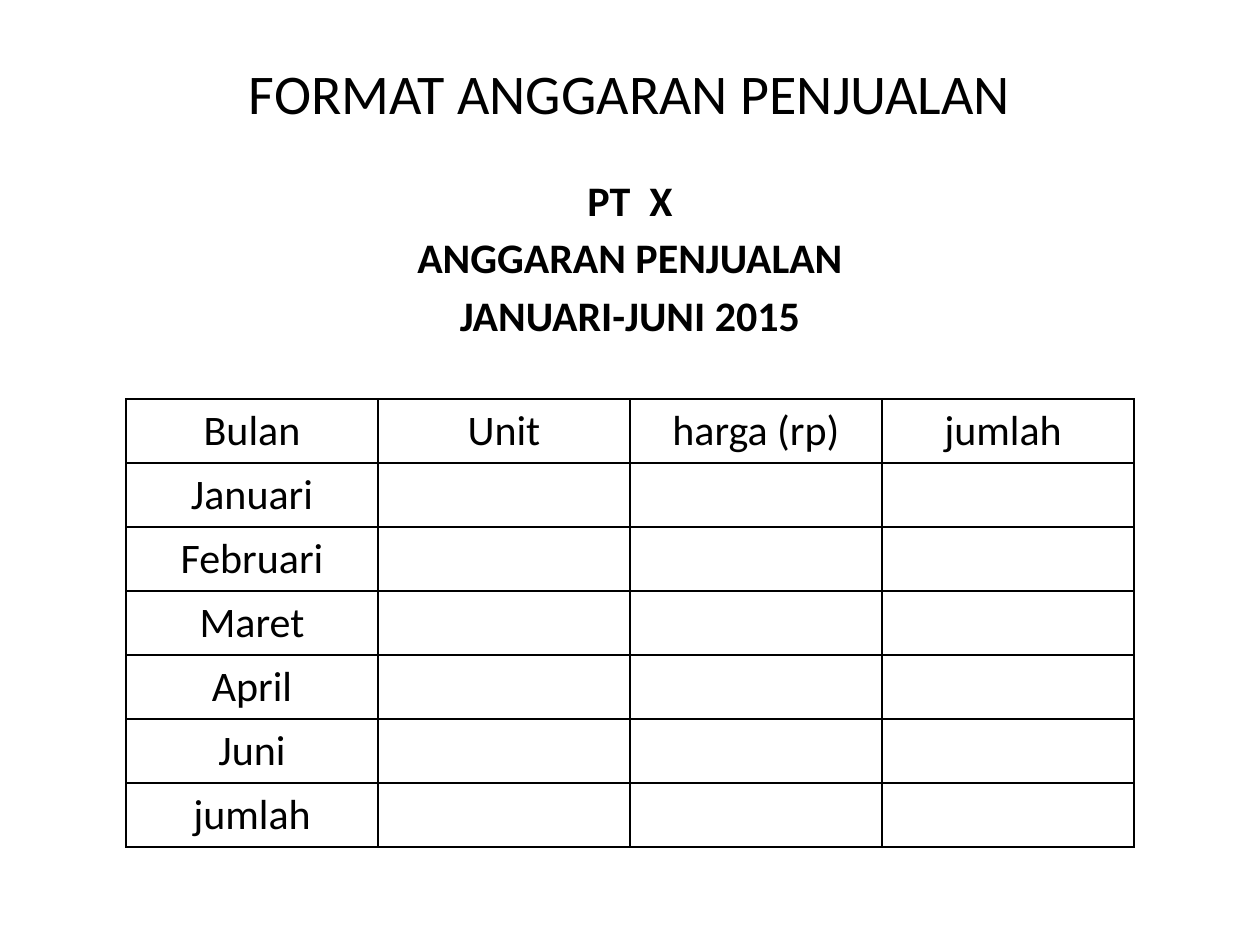
from dataclasses import dataclass
from lxml import etree
from pptx import Presentation
from pptx import util as u
from pptx.dml.color import RGBColor
from pptx.enum import text
from pptx.oxml.ns import qn

PX = 914400 // 126
FONT = "Calibri"
HUES = {"ink": "000000", "paper": "FFFFFF"}


@dataclass
class Block:
    left: int
    top: int
    width: int
    height: int
    lines: list[str]
    size: int
    bold: bool
    anchor: text.MSO_ANCHOR


BLOCKS = [
    Block(63, 38, 1134, 109, ["FORMAT ANGGARAN PENJUALAN"], 32, False,
          text.MSO_ANCHOR.MIDDLE),
    Block(63, 168, 1134, 677,
          ["PT  X", "ANGGARAN PENJUALAN", "JANUARI-JUNI 2015"], 24, True,
          text.MSO_ANCHOR.TOP),
]
HEADS = ["Bulan", "Unit", "harga (rp)", "jumlah "]
MONTHS = ["Januari", "Februari", "Maret", "April", "Juni", "jumlah"]
ROWS = [HEADS] + [[name, "", "", ""] for name in MONTHS]
LEFT, TOP, COL, ROW = 126, 399, 252, 64


def style(para, size: int, bold: bool = False) -> None:
    para.alignment = text.PP_ALIGN.CENTER
    for run in para.runs:
        font = run.font
        font.name, font.size, font.bold = FONT, u.Pt(size), bold
        font.color.rgb = RGBColor.from_string(HUES["ink"])


def draw_block(slide, block: Block) -> None:
    box = slide.shapes.add_textbox(block.left * PX, block.top * PX,
                                   block.width * PX, block.height * PX)
    frame = box.text_frame
    frame.word_wrap = True
    frame.vertical_anchor = block.anchor
    frame.text = "\n".join(block.lines)
    for i, para in enumerate(frame.paragraphs):
        style(para, block.size, block.bold)
        para.space_before = u.Pt(4 if i else 0)


def add_edges(cell) -> None:
    props = cell._tc.get_or_add_tcPr()
    for i, tag in enumerate(("a:lnL", "a:lnR", "a:lnT", "a:lnB")):
        line = etree.Element(qn(tag), w=str(u.Pt(1)))
        fill = etree.SubElement(line, qn("a:solidFill"))
        etree.SubElement(fill, qn("a:srgbClr"), val=HUES["ink"])
        props.insert(i, line)


def draw_table(slide, rows: list[list[str]]) -> None:
    cols = len(rows[0])
    table = slide.shapes.add_table(len(rows), cols, LEFT * PX, TOP * PX,
                                   cols * COL * PX, len(rows) * ROW * PX).table
    table.first_row = table.horz_banding = False
    for r, row in enumerate(rows):
        for c, label in enumerate(row):
            cell = table.cell(r, c)
            cell.text_frame.text = label
            style(cell.text_frame.paragraphs[0], 24)
            cell.fill.solid()
            cell.fill.fore_color.rgb = RGBColor.from_string(HUES["paper"])
            add_edges(cell)


def main() -> None:
    deck = Presentation()
    deck.slide_width, deck.slide_height = u.Inches(10), u.Inches(7.5)
    slide = deck.slides.add_slide(deck.slide_layouts[6])
    # Title and budget heading
    for block in BLOCKS:
        draw_block(slide, block)
    # Empty budget form by month
    draw_table(slide, ROWS)
    deck.save("out.pptx")


if __name__ == "__main__":
    main()
